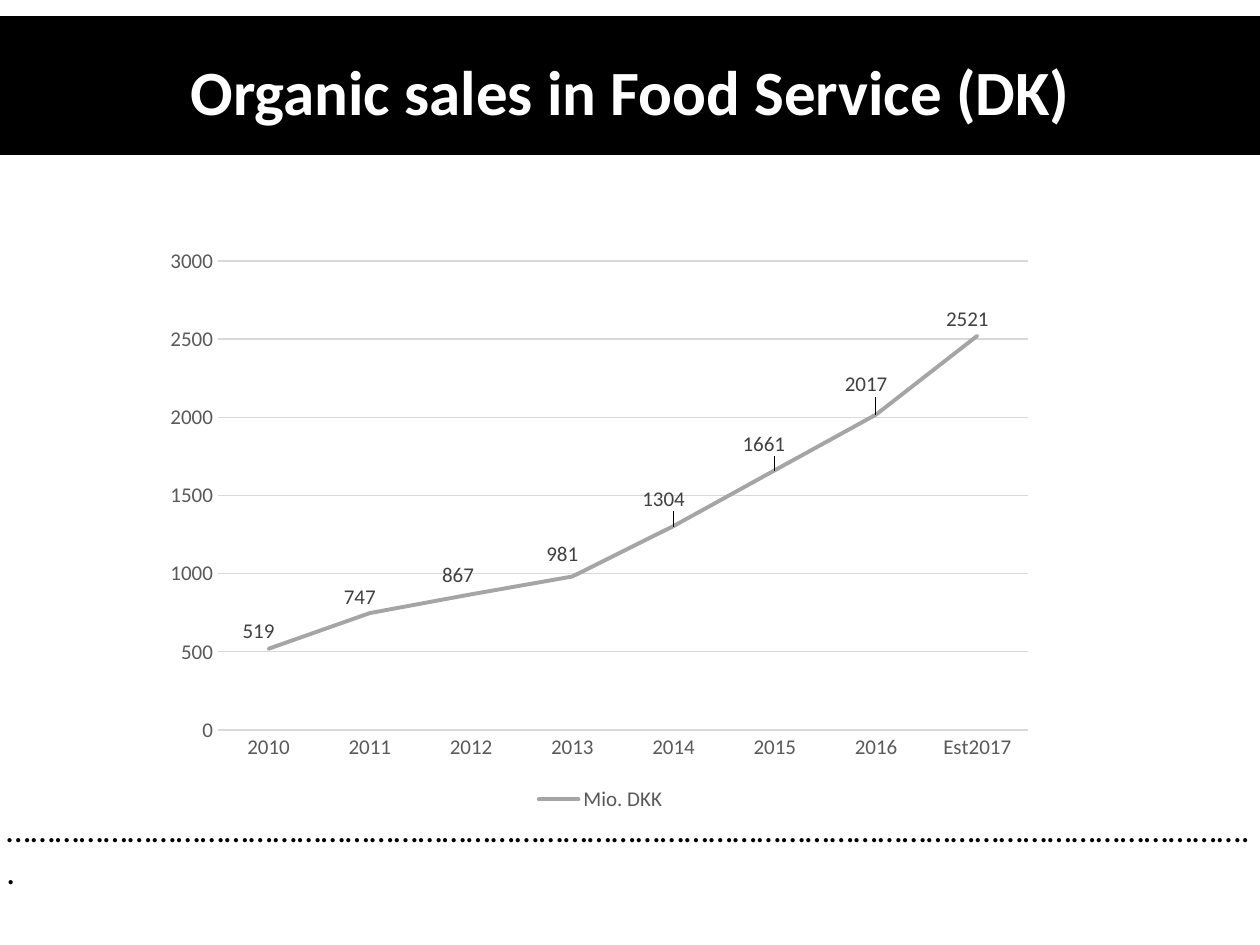
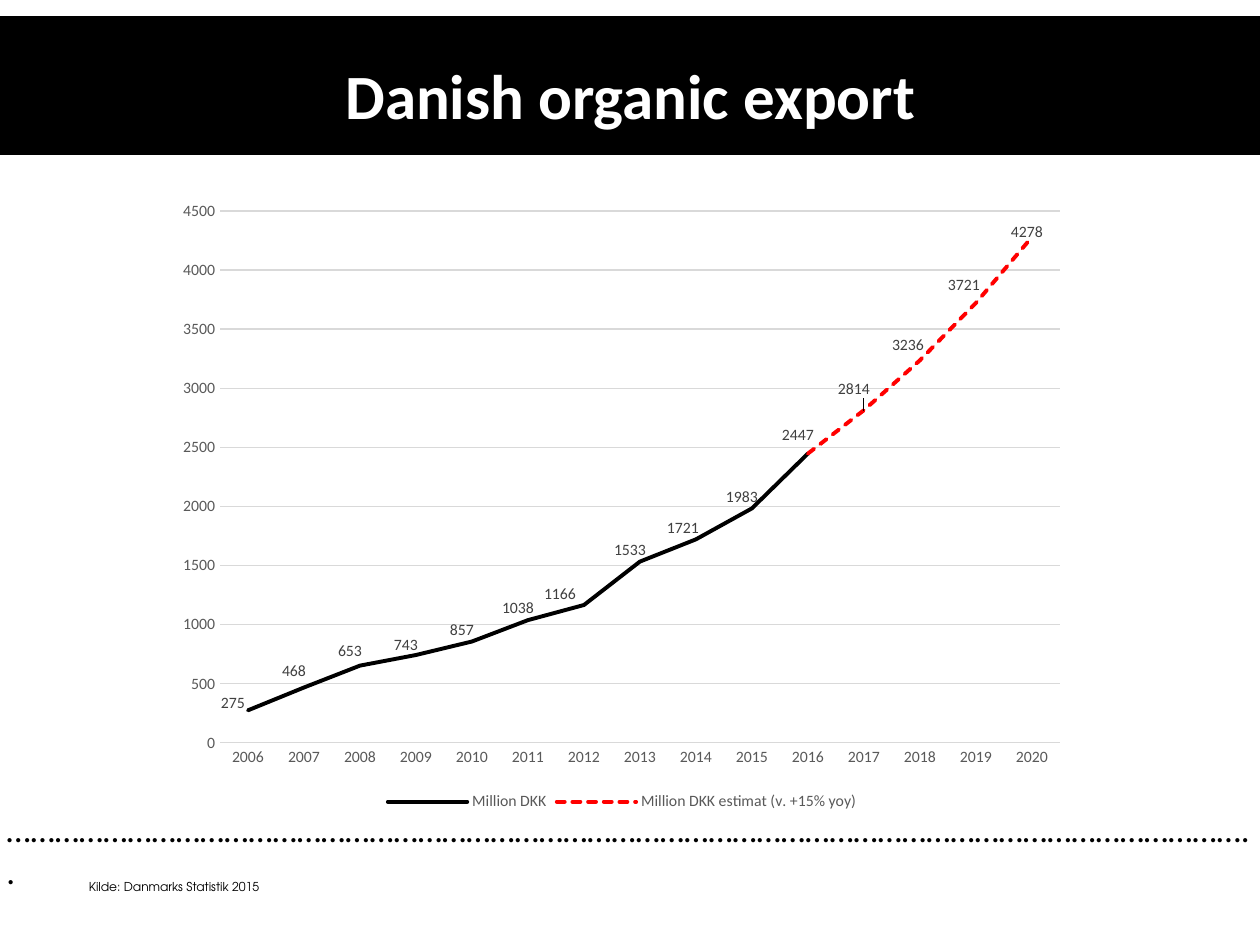
from lxml.etree import SubElement
from pptx import Presentation
from pptx.chart.data import CategoryChartData
from pptx.dml.color import RGBColor
from pptx.enum.chart import XL_CHART_TYPE, XL_LABEL_POSITION, XL_LEGEND_POSITION, XL_TICK_MARK
from pptx.enum.dml import MSO_LINE
from pptx.enum.shapes import MSO_SHAPE
from pptx.enum.text import MSO_ANCHOR, MSO_AUTO_SIZE, PP_ALIGN
from pptx.oxml import parse_xml
from pptx.oxml.ns import nsdecls, qn
from pptx.util import Pt

SCALE = 914400 / 126
DOTS = "……………………………………………………………………………………………………………………………………….."


def px(*nums):
    return [round(n * SCALE) for n in nums]


def style(font, size, color, name="Calibri", bold=False):
    font.name, font.size, font.bold = name, Pt(size), bold
    font.color.rgb = RGBColor.from_string(color)


pages = [
    dict(
        title="Organic sales in Food Service (DK)", top=14, size=12,
        box=(154, 237, 893, 580), plot=(218, 261, 810, 469), peak=3000,
        cats=[str(y) for y in range(2010, 2017)] + ["Est2017"],
        lines=[
            ("Mio. DKK", "A5A5A5", None, 0,
             [519, 747, 867, 981, 1304, 1661, 2017, 2521],
             [(-10, -18), (-10, -16), (-13, -19), (-10, -22),
              (-10, -27), (-11, -26), (-10, -30), (-10, -17)]),
        ],
    ),
    dict(
        title="Danish organic export", top=18, size=9,
        box=(165, 189, 914, 627), plot=(220, 211, 840, 532), peak=4500,
        cats=[str(y) for y in range(2006, 2021)],
        lines=[
            ("Million DKK", "000000", None, 0,
             [275, 468, 653, 743, 857, 1038, 1166, 1533, 1721, 1983, 2447],
             [(-15, -7), (-10, -16), (-10, -14), (-10, -10), (-10, -11), (-10, -12),
              (-24, -11), (-10, -11), (-13, -11), (-10, -11), (-10, -18)]),
            ("Million DKK estimat (v. +15% yoy)", "FF0000", MSO_LINE.SQUARE_DOT, 10,
             [2447, 2814, 3236, 3721, 4278],
             [None, (-10, -21), (-12, -15), (-12, -18), (-5, -5)]),
        ],
    ),
]

deck = Presentation()
deck.slide_width, deck.slide_height = px(1260, 945)
layout = deck.slide_layouts[5]
slides = [deck.slides.add_slide(layout) for page in pages]

band = slides[0].shapes.add_shape(MSO_SHAPE.RECTANGLE, *px(0, 17, 1260, 137))
band.shadow.inherit = False
band.fill.solid()
band.fill.fore_color.rgb = band.line.color.rgb = RGBColor.from_string("000000")
band.line.width = Pt(1)
rule = slides[0].shapes.add_textbox(*px(-6, 801, 1271, 50))
rule.text_frame.word_wrap = True
rule.text_frame.text = DOTS
style(rule.text_frame.paragraphs[0].runs[0].font, 20, "000000")
for i, part in enumerate((band, rule)):
    part.element.nvSpPr.cNvPr.set("id", str(20 + i))
    layout.shapes.element.insert(2 + i, part.element)

for slide, page in zip(slides, pages):
    title = slide.shapes.title
    title.left, title.top, title.width, title.height = px(24, page["top"], 1213, 122)
    frame = title.text_frame
    frame.text = page["title"]
    frame.auto_size = MSO_AUTO_SIZE.NONE
    frame.vertical_anchor = MSO_ANCHOR.BOTTOM
    para = frame.paragraphs[0]
    para.alignment, para.line_spacing = PP_ALIGN.CENTER, 0.9
    style(para.runs[0].font, 36, "FFFFFF", bold=True)

    data = CategoryChartData()
    data.categories = page["cats"]
    for name, color, dash, start, vals, shifts in page["lines"]:
        tail = len(page["cats"]) - start - len(vals)
        data.add_series(name, [None] * start + vals + [None] * tail)
    left, top, wide, high = page["box"]
    chart = slide.shapes.add_chart(XL_CHART_TYPE.LINE, *px(*page["box"]), data).chart
    style(chart.font, 10, "000000")
    chart.has_title = False
    chart.has_legend = True
    chart.legend.position = XL_LEGEND_POSITION.BOTTOM
    chart.legend.include_in_layout = False
    style(chart.legend.font, page["size"], "595959")

    x, y, w, h = page["plot"]
    area = chart._chartSpace.chart.plotArea
    for old in area.findall(qn("c:layout")):
        area.remove(old)
    grid = parse_xml(f"<c:layout {nsdecls('c')}><c:manualLayout/></c:layout>")
    for tag, val in (("layoutTarget", "inner"), ("xMode", "edge"), ("yMode", "edge"),
                     ("x", (x - left) / wide), ("y", (y - top) / high),
                     ("w", w / wide), ("h", h / high)):
        SubElement(grid[0], qn("c:" + tag)).set("val", str(val))
    area.insert(0, grid)

    for axis in (chart.category_axis, chart.value_axis):
        axis.major_tick_mark = axis.minor_tick_mark = XL_TICK_MARK.NONE
        style(axis.tick_labels.font, page["size"], "595959")
    val_axis = chart.value_axis
    val_axis.minimum_scale, val_axis.maximum_scale, val_axis.major_unit = 0, page["peak"], 500
    val_axis.has_major_gridlines = True
    val_axis.format.line.fill.background()
    for line in (chart.category_axis.format.line, val_axis.major_gridlines.format.line):
        line.color.rgb = RGBColor.from_string("D9D9D9")
        line.width = Pt(0.75)

    chart.plots[0].vary_by_categories = False
    for ser, (name, color, dash, start, vals, shifts) in zip(chart.plots[0].series, page["lines"]):
        ser.smooth = False
        line = ser.format.line
        line.color.rgb = RGBColor.from_string(color)
        line.width = Pt(2.25)
        if dash:
            line.dash_style = dash
        ser._element.xpath("c:spPr/a:ln")[0].set("cap", "rnd")
        ser.data_labels.show_value = False
        for i, shift in enumerate(shifts, start):
            if not shift:
                continue
            label = ser.points[i].data_label
            style(label.font, page["size"], "404040")
            label.position = XL_LABEL_POSITION.CENTER
            node = ser._element.xpath(f"c:dLbls/c:dLbl[c:idx/@val='{i}']")[0]
            node.insert(1, parse_xml(
                f"<c:layout {nsdecls('c')}><c:manualLayout>"
                f"<c:x val='{shift[0] / wide}'/><c:y val='{shift[1] / high}'/>"
                "</c:manualLayout></c:layout>"))

note = slides[1].shapes.add_textbox(*px(33, 873, 282, 28))
note.text_frame.word_wrap = True
note.text_frame.auto_size = MSO_AUTO_SIZE.SHAPE_TO_FIT_TEXT
note.text_frame.text = "Kilde: Danmarks Statistik 2015"
para = note.text_frame.paragraphs[0]
para.alignment = PP_ALIGN.CENTER
style(para.runs[0].font, 7, "000000", "TeX Gyre Adventor")

deck.save("out.pptx")
